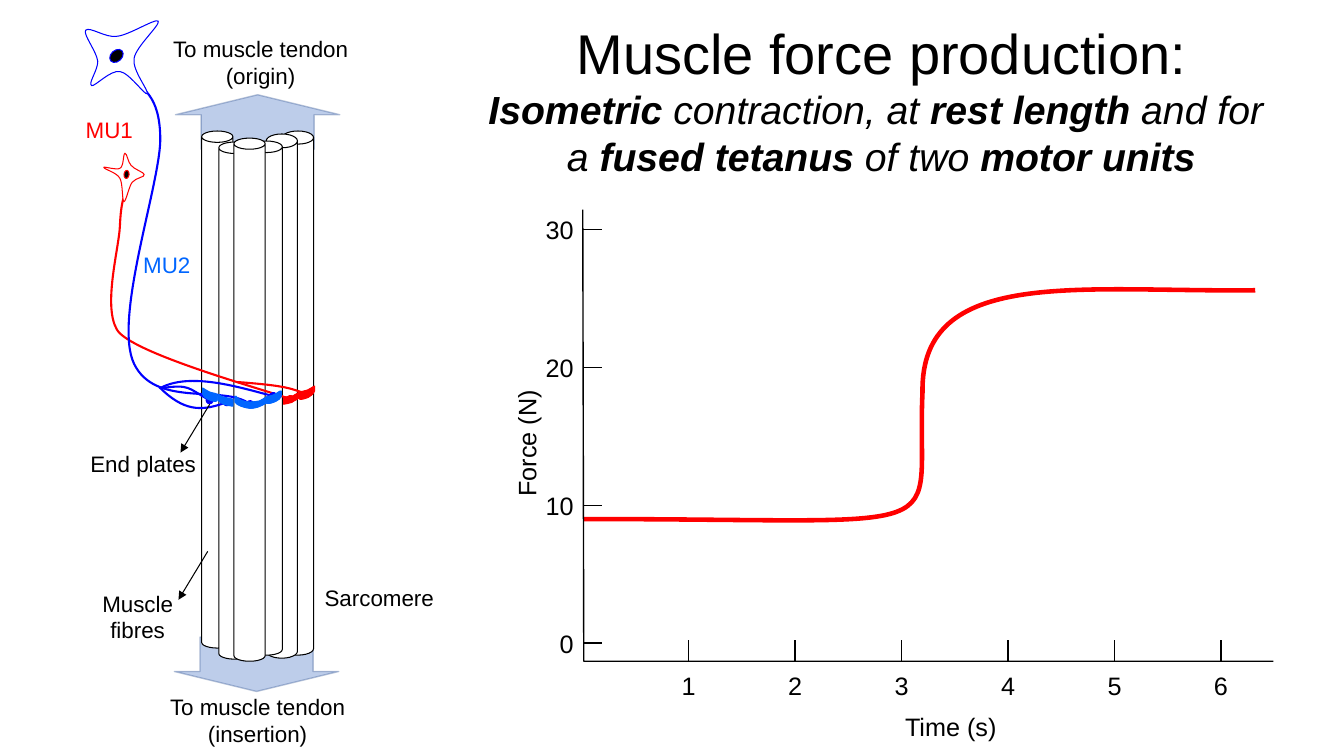
from lxml.etree import SubElement
from pptx import Presentation
from pptx.dml.color import RGBColor
from pptx.enum.shapes import MSO_CONNECTOR as Conn, MSO_SHAPE as Kind
from pptx.enum.text import MSO_ANCHOR as Anchor, MSO_AUTO_SIZE as Auto, PP_ALIGN as Align
from pptx.oxml.ns import qn
from pptx.util import Inches, Pt

HUE = {"ink": "000000", "paper": "FFFFFF", "red": "FF0000", "blue": "0000FF",
       "sky": "0066FF", "arrow": "4472C4", "edge": "325491"}
FONT = "Arial"

CELL_1 = [(1.3, 1.64), (1.27, 1.61, 1.26, 1.52, 1.24, 1.52),
          (1.22, 1.53, 1.23, 1.65, 1.19, 1.67), (1.16, 1.69, 1.03, 1.65, 1.03, 1.66),
          (1.03, 1.68, 1.16, 1.71, 1.19, 1.77), (1.22, 1.82, 1.21, 1.99, 1.23, 2),
          (1.25, 2, 1.28, 1.85, 1.31, 1.81), (1.35, 1.76, 1.44, 1.76, 1.43, 1.73),
          (1.43, 1.71, 1.33, 1.68, 1.3, 1.64)]
CELL_2 = [(0.97, 0.61), (0.97, 0.7, 0.87, 0.83, 0.91, 0.85),
          (0.94, 0.86, 1.1, 0.69, 1.19, 0.71), (1.28, 0.72, 1.44, 0.95, 1.46, 0.93),
          (1.48, 0.9, 1.31, 0.7, 1.33, 0.58), (1.35, 0.46, 1.59, 0.25, 1.57, 0.21),
          (1.54, 0.18, 1.28, 0.35, 1.16, 0.36), (1.05, 0.38, 0.89, 0.26, 0.85, 0.3),
          (0.82, 0.34, 0.96, 0.51, 0.97, 0.61)]
AXONS_1 = [[(1.24, 1.91), (1.23, 1.96, 1.2, 2.01, 1.19, 2.24),
            (1.18, 2.47, 1.02, 3.03, 1.16, 3.27), (1.29, 3.5, 2.71, 3.89, 2.88, 3.96)],
           [(2.36, 3.79), (2.74, 3.82, 2.87, 3.84, 3.04, 3.91)]]
AXONS_2 = [[(1.59, 3.85), (1.88, 3.69, 2.4, 3.85, 2.71, 3.93)],
           [(1.58, 3.84), (1.82, 4.08, 2.01, 4.08, 2.25, 3.99)],
           [(1.35, 0.79), (1.39, 0.89, 1.59, 0.92, 1.59, 1.39),
            (1.58, 1.86, 1.12, 3.17, 1.33, 3.61), (1.54, 4.04, 2.23, 3.81, 2.48, 4.01)],
           [(1.61, 3.85), (1.88, 3.81, 1.87, 3.86, 2.08, 3.97)]]
FORCE = [(0.01, 3.07), (3.87, 3.07, 3.3, 3.3, 3.37, 1.81),
         (3.35, 0.56, 4.93, 0.82, 6.67, 0.8)]
FULL = [(0, 0), (0, 0.06), (0.01, 0.08, 0.04, 0.09, 0.06, 0.1),
        (0.09, 0.11, 0.12, 0.12, 0.15, 0.12), (0.18, 0.12, 0.22, 0.11, 0.24, 0.1),
        (0.27, 0.09, 0.3, 0.07, 0.31, 0.06), (0.31, 0.01),
        (0.3, 0.01, 0.27, 0.04, 0.24, 0.05), (0.22, 0.05, 0.18, 0.06, 0.15, 0.06),
        (0.12, 0.06, 0.07, 0.05, 0.05, 0.04), (0.02, 0.03, 0.01, 0.01, 0, 0)]
HALF = [(0, 0.12), (0.02, 0.13, 0.07, 0.11, 0.09, 0.1),
        (0.11, 0.09, 0.14, 0.07, 0.14, 0.05), (0.14, 0),
        (0.13, 0, 0.1, 0.03, 0.07, 0.04), (0.05, 0.05, 0.01, 0.05, 0, 0.06)]
FLIP = [tuple(v if i % 2 else 0.14 - v for i, v in enumerate(p)) for p in HALF]
PART = [(0.15, 0.05), (0.15, 0.11), (0.14, 0.11, 0.09, 0.1, 0.06, 0.09),
        (0.03, 0.08, 0.01, 0.06, 0, 0.05), (0, 0),
        (0.01, 0, 0.04, 0.03, 0.06, 0.03), (0.09, 0.04, 0.12, 0.04, 0.15, 0.05)]


def rgb(name):
    """Give the named colour."""
    return RGBColor.from_string(HUE[name])


def paint(shape, fill, line, width=0.75, tip=None):
    """Set fill, outline and arrowhead of a shape."""
    shape.shadow.inherit = False
    if fill:
        shape.fill.solid()
        shape.fill.fore_color.rgb = rgb(fill)
    else:
        shape.fill.background()
    if line:
        shape.line.color.rgb = rgb(line)
        shape.line.width = Pt(width)
    else:
        shape.line.fill.background()
    if tip:
        SubElement(shape.line._ln, qn("a:tailEnd"), type=tip)
    return shape


def solid(slide, kind, box, fill, line, turn=0, adj=()):
    """Add a preset shape."""
    shape = paint(slide.shapes.add_shape(kind, *map(Inches, box)), fill, line)
    shape.rotation = turn
    for i, val in enumerate(adj):
        shape.adjustments[i] = val
    return shape


def pairs(step):
    """Split a step into its points."""
    return list(zip(step[::2], step[1::2]))


def bend(steps):
    """Sample lines and curves to find their extent."""
    out = [steps[0]]
    for step in steps[1:]:
        pts = [out[-1]] + pairs(step)
        if len(pts) == 4:
            for t in (k / 24 for k in range(1, 24)):
                mix = ((1 - t) ** 3, 3 * t * (1 - t) ** 2, 3 * t * t * (1 - t), t ** 3)
                out.append(tuple(sum(m * p[d] for m, p in zip(mix, pts)) for d in (0, 1)))
        out.append(pts[-1])
    return out


def trace(slide, at, steps, line, width=0.75, fill=None, tip=None):
    """Draw lines and cubic curves offset by a corner."""
    dots = [(Inches(at[0] + x), Inches(at[1] + y)) for x, y in bend(steps)]
    pen = slide.shapes.build_freeform(*dots[0], scale=1.0)
    pen.add_line_segments(dots[1:], close=False)
    form = pen.convert_to_shape()
    route = next(form._element.spPr.iter(qn("a:path")))
    for node in list(route)[1:]:
        route.remove(node)
    for step in steps[1:]:
        pts = pairs(step)
        node = SubElement(route, qn("a:cubicBezTo" if len(pts) == 3 else "a:lnTo"))
        for x, y in pts:
            SubElement(node, qn("a:pt"), x=str(Inches(at[0] + x) - form.left),
                       y=str(Inches(at[1] + y) - form.top))
    if fill:
        SubElement(route, qn("a:close"))
    return paint(form, fill, line, width, tip)


def rule(slide, x1, y1, x2, y2):
    """Draw a thin straight line."""
    line = slide.shapes.add_connector(Conn.STRAIGHT, *map(Inches, (x1, y1, x2, y2)))
    line.line.color.rgb = rgb("ink")
    line.line.width = Pt(1)
    SubElement(line._element.spPr, qn("a:effectLst"))


def trim(frame, anchor, auto):
    """Clear margins and set wrapping of a text frame."""
    frame.margin_left = frame.margin_right = frame.margin_top = frame.margin_bottom = 0
    frame.word_wrap = True
    frame.auto_size = auto
    frame.vertical_anchor = anchor


def style(run, size, hue="ink"):
    """Set the font of a run."""
    run.font.name = FONT
    run.font.size = Pt(size)
    run.font.color.rgb = rgb(hue)


def write(shape, text, size, hue, align, anchor):
    """Put one styled paragraph into a shape."""
    trim(shape.text_frame, anchor, Auto.SHAPE_TO_FIT_TEXT)
    para = shape.text_frame.paragraphs[0]
    para.text = text
    para.alignment = align
    style(para.runs[0], size, hue)


def label(slide, box, text, hue="ink", align=Align.CENTER):
    """Add a text box."""
    shape = slide.shapes.add_textbox(*map(Inches, box))
    write(shape, text, 16, hue, align, Anchor.TOP)


def mark(slide, box, text, align=Align.CENTER, turn=0):
    """Add a white axis label."""
    shape = solid(slide, Kind.RECTANGLE, box, "paper", None, turn)
    write(shape, text, 18, "ink", align, Anchor.MIDDLE)


def head(slide, box):
    """Fill the title with its heading and subheading."""
    title = slide.shapes.title
    title.left, title.top, title.width, title.height = map(Inches, box)
    frame = title.text_frame
    frame.text = "Muscle force production:"
    trim(frame, Anchor.TOP, Auto.NONE)
    style(frame.paragraphs[0].runs[0], 40)
    sub = frame.add_paragraph()
    for text, bold in (("Isometric", True), (" contraction, at ", False),
                       ("rest length", True), (" and for ", False), ("a ", False),
                       ("fused tetanus ", True), ("of two ", False), ("motor units", True)):
        if text == "a ":
            sub.add_line_break()
        run = sub.add_run()
        run.text = text
        style(run, 28)
        run.font.bold = bold
        run.font.italic = True
    for para in frame.paragraphs:
        para.alignment = Align.CENTER


def muscle(slide, box):
    """Draw the fibres, their two motor units and the labels."""
    left, top = box[:2]

    def spot(x, y, *size):
        return (left + x, top + y, *size)

    def cans(rows):
        for x, y, high, adj in rows:
            solid(slide, Kind.CAN, spot(x, y, 0.31, high), "paper", "ink", adj=[adj])

    def plates(hue, shift, rows):
        for dx, dy in ((0, 0), shift):
            for x, y, steps in rows:
                trace(slide, spot(x + dx, y + dy), steps, hue, fill=hue)

    def nerve(hue, cell, core, turn, axons):
        for steps in axons:
            trace(slide, box, steps, hue, 1.5, tip="oval")
        trace(slide, box, cell, hue, fill="paper")
        solid(slide, Kind.OVAL, spot(*core), "ink", hue, turn)

    for x, y, turn in ((1.74, 0.94, 180), (1.73, 6.32, 0)):
        pull = solid(slide, Kind.DOWN_ARROW, spot(x, y, 1.63, 0.54), "arrow", "edge",
                     turn, (0.688, 0.367))
        pull.line.width = Pt(1)
        for tone in pull._element.spPr.iter(qn("a:srgbClr")):
            SubElement(tone, qn("a:alpha"), val="35000")
    cans([(2.8, 1.3, 5.2, 0.42), (2, 1.3, 5.13, 0.364),
          (2.17, 1.41, 5.13, 0.364), (2.64, 1.33, 5.2, 0.442)])
    plates("red", (0.01, -0.01), [(2.65, 3.89, FULL), (2.97, 3.84, HALF)])
    cans([(2.49, 1.4, 5.1, 0.368), (2.32, 1.37, 5.19, 0.357)])
    nerve("red", CELL_1, (1.23, 1.69, 0.05, 0.08), 186.8, AXONS_1)
    nerve("blue", CELL_2, (1.1, 0.48, 0.11, 0.15), 47.4, AXONS_2)
    for x, y in ((2.06, 5.47), (2.08, 4.01)):
        trace(slide, spot(x, y), [(0, 0), (-0.29, 0.48)], "ink", tip="triangle")
    plates("sky", (0.01, 0), [(2.33, 3.93, FULL), (2.64, 3.88, HALF)])
    plates("sky", (0, 0.01), [(2.16, 3.91, PART), (2.01, 3.85, FLIP)])
    for x, y, wide, high, text in ((0.87, 4.47, 1.1, 0.27, "End plates"),
                                   (0.97, 5.85, 0.79, 0.54, "Muscle fibres"),
                                   (1.54, 6.88, 2.03, 0.54, "To muscle tendon (insertion)"),
                                   (1.57, 0.35, 2.03, 0.54, "To muscle tendon (origin)")):
        label(slide, spot(x, y, wide, high), text)
    for x, y, wide, text, hue in ((3.22, 5.8, 1.16, "Sarcomere", "ink"),
                                  (0.85, 1.15, 0.58, "MU1", "red"),
                                  (1.42, 2.49, 0.58, "MU2", "sky")):
        label(slide, spot(x, y, wide, 0.27), text, hue, Align.LEFT)


def graph(slide, box):
    """Draw the force curve with its axes, ticks and labels."""
    left, top, wide, high = box
    base = top + high
    trace(slide, box, FORCE, "red", 3.25)
    for i in range(4):
        y = base - 0.18 - i * 1.367
        rule(slide, left + 0.19, y, left, y)
        mark(slide, (left - 0.55, y - 0.15, 0.46, 0.3), str(i * 10), Align.RIGHT)
    mark(slide, (left - 2.16, top + 2.17, 3.2, 0.3), "Force (N)", turn=270)
    trace(slide, box, [(0, 0), (0.01, high), (wide, high)], "ink", 1)
    for i in range(6):
        x = left + 1.05 + i * 1.056
        rule(slide, x, base - 0.21, x, base)
        mark(slide, (x - 0.31, base + 0.09, 0.62, 0.3), str(i + 1))
    mark(slide, (left + 1.68, base + 0.5, 3.94, 0.3), "Time (s)")


def main():
    """Build and save the slide."""
    deck = Presentation()
    deck.slide_width, deck.slide_height = Inches(13.33), Inches(7.5)
    slide = deck.slides.add_slide(deck.slide_layouts[5])
    head(slide, (4.84, 0.18, 7.8, 1.62))
    muscle(slide, (0, 0, 4.5, 7.5))
    graph(slide, (5.78, 2.08, 6.85, 4.48))
    deck.save("out.pptx")


if __name__ == "__main__":
    main()
